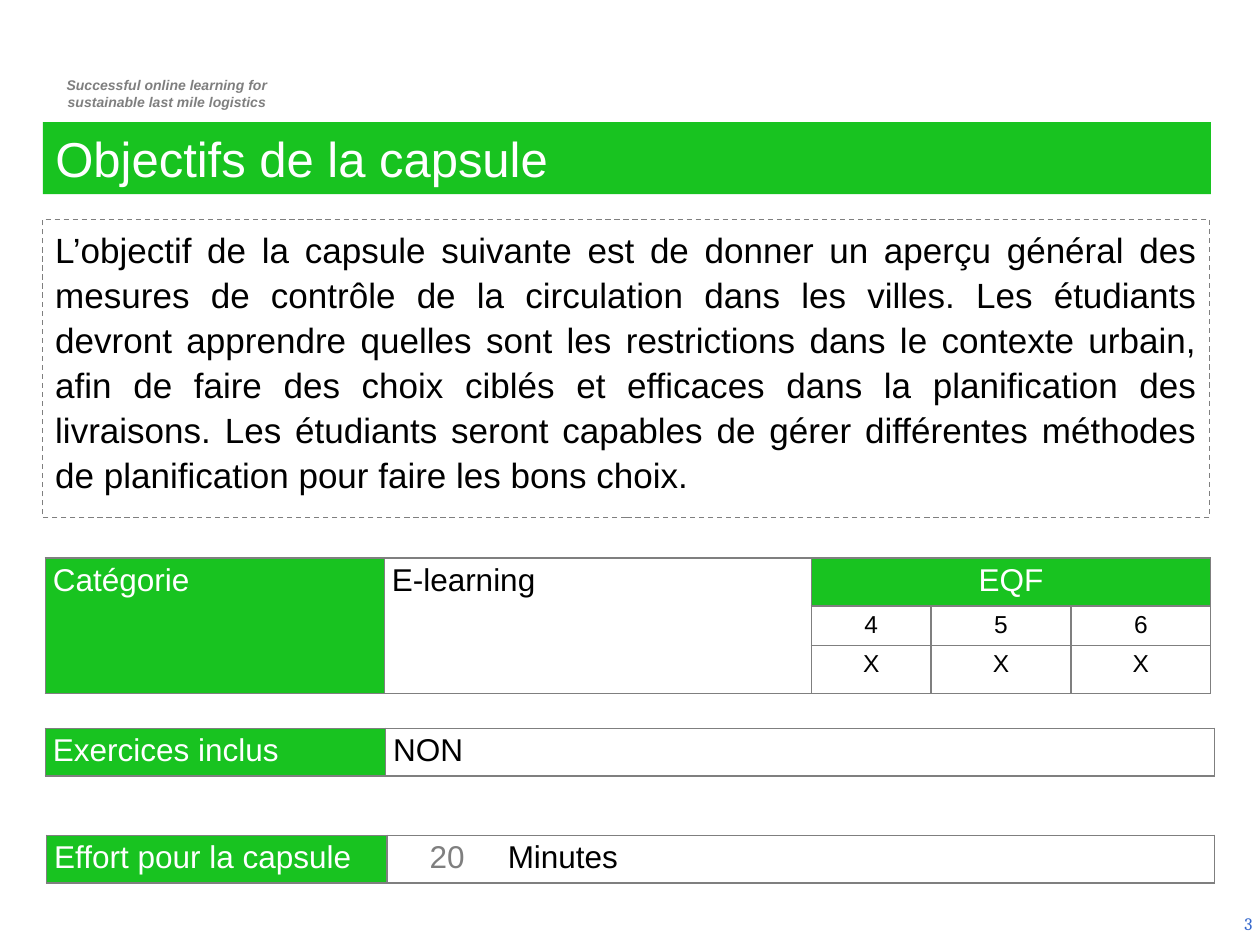
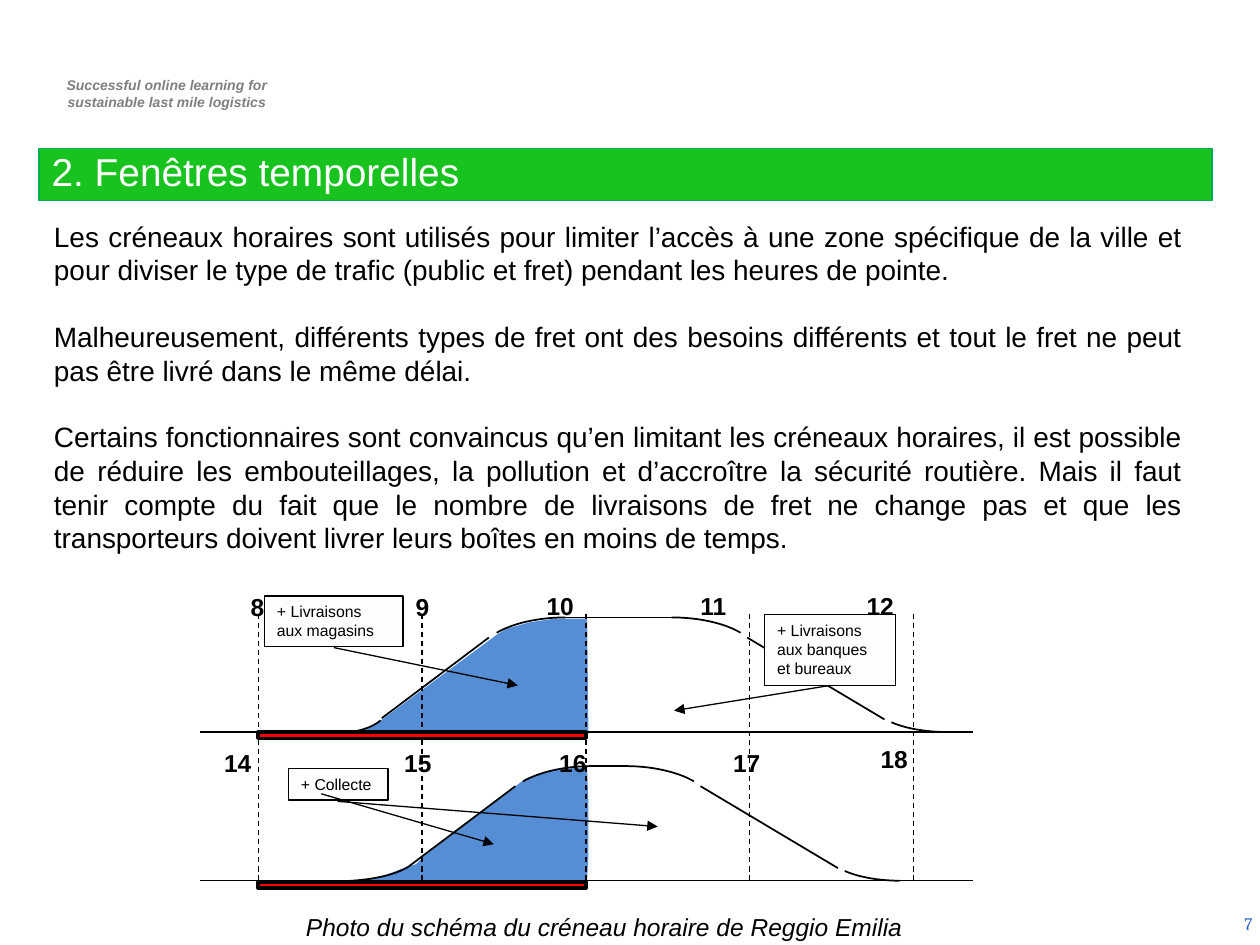
from dataclasses import dataclass
from typing import NamedTuple

from lxml.etree import SubElement
from pptx import Presentation
from pptx.dml.color import RGBColor
from pptx.enum.dml import MSO_LINE
from pptx.enum.shapes import MSO_CONNECTOR, MSO_SHAPE
from pptx.enum.text import MSO_ANCHOR, MSO_AUTO_SIZE, PP_ALIGN
from pptx.oxml.ns import qn
from pptx.util import Emu, Pt

EMU_PER_PX = 9144


@dataclass(frozen=True)
class Theme:
    """Colours, fonts and type sizes shared by the slides."""
    green: str = "18C320"
    green_edge: str = "00B050"
    gray: str = "7F7F7F"
    black: str = "000000"
    white: str = "FFFFFF"
    number_blue: str = "3366CC"
    area_blue: str = "558ED5"
    red: str = "FF0000"
    callout: str = "FDFDFD"
    font: str = "Arial"
    number_font: str = "Cambria"
    title: float = 28
    subtitle: float = 22.2
    objective: float = 20
    table: float = 18
    body: float = 16
    small: float = 14
    number: float = 10
    note: float = 9
    header: float = 8


THEME = Theme()


class Box(NamedTuple):
    """Place and size in px."""
    left: int
    top: int
    width: int
    height: int


class TextStyle(NamedTuple):
    """Look of one block of text."""
    size: float
    color: str = THEME.black
    align: PP_ALIGN = PP_ALIGN.LEFT
    bold: bool = False
    italic: bool = False
    font: str = THEME.font
    line_spacing: float = 1.0
    gap: float = 0


class Outline(NamedTuple):
    """Look of a line."""
    color: str = THEME.black
    width: float = 0.75
    dashed: bool = False


class Cell(NamedTuple):
    """One table cell with its span."""
    row: int
    column: int
    text: str
    style: TextStyle
    fill: str | None = None
    rows: int = 1
    columns: int = 1


class Profile(NamedTuple):
    """One delivery curve, as shifts from the morning curve."""
    drop: int
    left_shift: int
    right_shift: int
    foot: Box
    foot_start: int


HEADER = TextStyle(THEME.header, THEME.gray, PP_ALIGN.CENTER, True, True)
NUMBER = TextStyle(THEME.number, THEME.number_blue, PP_ALIGN.RIGHT, font=THEME.number_font)
HEADING = TextStyle(THEME.table, THEME.white)
VALUE = TextStyle(THEME.table)
LEVEL = TextStyle(THEME.small, align=PP_ALIGN.CENTER)
HOUR = TextStyle(THEME.small, bold=True)

OBJECTIVE = (
    "L’objectif de la capsule suivante est de donner un aperçu général des mesures de contrôle "
    "de la circulation dans les villes. Les étudiants devront apprendre quelles sont les "
    "restrictions dans le contexte urbain, afin de faire des choix ciblés et efficaces dans la "
    "planification des livraisons. Les étudiants seront capables de gérer différentes méthodes "
    "de planification pour faire les bons choix.")
TIME_WINDOWS = "\n".join((
    "Les créneaux horaires sont utilisés pour limiter l’accès à une zone spécifique de la ville "
    "et pour diviser le type de trafic (public et fret) pendant les heures de pointe.",
    "Malheureusement, différents types de fret ont des besoins différents et tout le fret ne "
    "peut pas être livré dans le même délai.",
    "Certains fonctionnaires sont convaincus qu’en limitant les créneaux horaires, il est "
    "possible de réduire les embouteillages, la pollution et d’accroître la sécurité routière. "
    "Mais il faut tenir compte du fait que le nombre de livraisons de fret ne change pas et que "
    "les transporteurs doivent livrer leurs boîtes en moins de temps."))

MORNING_AREA = ((466, 491), (440, 491), (420, 494), (402, 499), (394, 504), (302, 572),
                (293, 577), (285, 580), (279, 582), (467, 582))
AFTERNOON_AREA = ((466, 609), (448, 610), (431, 613), (417, 618), (336, 680), (330, 686),
                  (323, 688), (310, 693), (300, 697), (290, 698), (271, 699), (466, 700),
                  (467, 680), (467, 636))
PROFILES = (Profile(0, 0, 0, Box(248, 521, 43, 78), 290),
            Profile(118, 21, -37, Box(245, 613, 43, 130), 280))
HOURS = (("8", 189, 465), ("9", 320, 465), ("10", 424, 464), ("11", 546, 464),
         ("12", 678, 464), ("14", 168, 589), ("15", 311, 589), ("16", 434, 589),
         ("17", 572, 589), ("18", 689, 586))
CALLOUTS = (("+ Livraisons aux magasins", Box(210, 473, 110, 40)),
            ("+ Livraisons aux banques et bureaux", Box(607, 488, 104, 56)),
            ("+ Collecte", Box(229, 610, 79, 25)))
ARROWS = ((265, 514, 411, 544), (659, 544, 535, 564), (255, 630, 392, 670), (268, 636, 522, 656))


def px(length: int) -> Emu:
    """Turn px into EMU."""
    return Emu(length * EMU_PER_PX)


def place(box: Box) -> tuple[Emu, ...]:
    """Turn a box into EMU."""
    return tuple(px(length) for length in box)


def write(text_frame, text: str, style: TextStyle, anchor=MSO_ANCHOR.TOP) -> None:
    """Fill a text frame and format its runs."""
    text_frame.text = text
    text_frame.word_wrap = True
    text_frame.vertical_anchor = anchor
    for index, paragraph in enumerate(text_frame.paragraphs):
        paragraph.alignment = style.align
        paragraph.line_spacing = style.line_spacing
        if index and style.gap:
            paragraph.space_before = Pt(style.gap)
        for run in paragraph.runs:
            run.font.name = style.font
            run.font.size = Pt(style.size)
            run.font.bold = style.bold
            run.font.italic = style.italic
            run.font.color.rgb = RGBColor.from_string(style.color)


def paint(fill, color: str | None) -> None:
    """Set a solid fill or none."""
    if color is None:
        fill.background()
    else:
        fill.solid()
        fill.fore_color.rgb = RGBColor.from_string(color)


def draw_outline(line, outline: Outline | None) -> None:
    """Set a line's colour, width and dash."""
    paint(line.fill, outline.color if outline else None)
    if outline:
        line.width = Pt(outline.width)
        if outline.dashed:
            line.dash_style = MSO_LINE.DASH


def add_text(shapes, box: Box, text: str, style: TextStyle, anchor=MSO_ANCHOR.TOP):
    """Add a text box."""
    shape = shapes.add_textbox(*place(box))
    write(shape.text_frame, text, style, anchor)
    return shape


def add_box(shapes, box: Box, fill: str | None, outline: Outline, kind=MSO_SHAPE.RECTANGLE):
    """Add a preset shape without shadow."""
    shape = shapes.add_shape(kind, *place(box))
    shape.shadow.inherit = False
    paint(shape.fill, fill)
    draw_outline(shape.line, outline)
    return shape


def add_line(shapes, ends: tuple[int, int, int, int], outline=Outline(), arrow=False) -> None:
    """Add a straight line or arrow."""
    connector = shapes.add_connector(MSO_CONNECTOR.STRAIGHT, *(px(end) for end in ends))
    draw_outline(connector.line, outline)
    properties = connector._element.spPr
    if arrow:
        SubElement(properties.find(qn("a:ln")), qn("a:tailEnd"), type="triangle")
    SubElement(properties, qn("a:effectLst"))


def add_arc(shapes, box: Box, rotation: int, start: int, end: int) -> None:
    """Add an arc between two angles in degrees."""
    arc = add_box(shapes, box, None, Outline(width=1), MSO_SHAPE.ARC)
    arc.adjustments[0] = start * 0.6
    arc.adjustments[1] = end * 0.6
    arc.rotation = rotation


def add_area(shapes, points: tuple[tuple[int, int], ...]) -> None:
    """Add a filled area under a curve."""
    builder = shapes.build_freeform(*points[0], scale=EMU_PER_PX)
    builder.add_line_segments(points[1:], close=True)
    area = builder.convert_to_shape()
    area.shadow.inherit = False
    paint(area.fill, THEME.area_blue)
    draw_outline(area.line, None)


def add_table(shapes, left: int, top: int, widths: tuple[int, ...], heights: tuple[int, ...],
              cells: tuple[Cell, ...]):
    """Add a bordered table and return it."""
    box = Box(left, top, sum(widths), sum(heights))
    table = shapes.add_table(len(heights), len(widths), *place(box)).table
    table.first_row = table.horz_banding = False
    for column, width in zip(table.columns, widths):
        column.width = px(width)
    for row, height in zip(table.rows, heights):
        row.height = px(height)
    for cell in table.iter_cells():
        cell.margin_left = cell.margin_right = px(6)
        cell.margin_top = cell.margin_bottom = px(4)
        for side in ("lnL", "lnR", "lnT", "lnB"):
            border = SubElement(cell._tc.get_or_add_tcPr(), qn(f"a:{side}"), w=str(Pt(1)))
            solid = SubElement(border, qn("a:solidFill"))
            SubElement(solid, qn("a:srgbClr"), val=THEME.gray)
        paint(cell.fill, None)
    for item in cells:
        cell = table.cell(item.row, item.column)
        if item.rows * item.columns > 1:
            cell.merge(table.cell(item.row + item.rows - 1, item.column + item.columns - 1))
        write(cell.text_frame, item.text, item.style)
        paint(cell.fill, item.fill)
    return table


def add_slide(presentation, number: str, title: str, box: Box, style: TextStyle,
              outline: Outline | None, anchor):
    """Add a slide with header, page number and title band."""
    slide = presentation.slides.add_slide(presentation.slide_layouts[5])
    header = add_text(slide.shapes, Box(29, 56, 203, 37),
                      "Successful online learning for\nsustainable last mile logistics", HEADER)
    header.text_frame.margin_left = px(14)
    page = add_text(slide.shapes, Box(771, 716, 229, 34), number, NUMBER, MSO_ANCHOR.MIDDLE)
    page.text_frame.margin_right = px(6)
    band = slide.shapes.title
    band.left, band.top, band.width, band.height = place(box)
    paint(band.fill, THEME.green)
    draw_outline(band.line, outline)
    write(band.text_frame, title, style, anchor)
    band.text_frame.auto_size = MSO_AUTO_SIZE.NONE
    return slide


def build_objectives(presentation) -> None:
    """Build the slide of objectives."""
    slide = add_slide(presentation, "3", "Objectifs de la capsule", Box(34, 97, 927, 57),
                      TextStyle(THEME.title, THEME.white), None, MSO_ANCHOR.TOP)
    shapes = slide.shapes
    objective = add_box(shapes, Box(34, 174, 926, 237), None, Outline(THEME.gray, dashed=True))
    write(objective.text_frame, OBJECTIVE,
          TextStyle(THEME.objective, align=PP_ALIGN.JUSTIFY, line_spacing=1.07))
    levels = tuple(Cell(row, column, text, LEVEL)
                   for row, texts in enumerate(("456", "XXX"), 1)
                   for column, text in enumerate(texts, 2))
    add_table(shapes, 36, 443, (269, 339, 95, 111, 111), (37, 31, 37), (
        Cell(0, 0, "Catégorie", HEADING, THEME.green, rows=3),
        Cell(0, 1, "E-learning", VALUE, rows=3),
        Cell(0, 2, "EQF", HEADING._replace(align=PP_ALIGN.CENTER), THEME.green, columns=3),
        *levels))
    add_table(shapes, 36, 578, (270, 658), (37,), (
        Cell(0, 0, "Exercices inclus", HEADING, THEME.green), Cell(0, 1, "NON", VALUE)))
    effort = add_table(shapes, 37, 663, (270, 657), (37,), (
        Cell(0, 0, "Effort pour la capsule", HEADING, THEME.green),
        Cell(0, 1, "20", VALUE._replace(color=THEME.gray))))
    duration = effort.cell(0, 1)
    duration.margin_left = px(34)
    paragraph = duration.text_frame.paragraphs[0]
    tabs = SubElement(paragraph._p.get_or_add_pPr(), qn("a:tabLst"))
    SubElement(tabs, qn("a:tab"), pos=str(px(62)), algn="l")
    unit = paragraph.add_run()
    unit.text = "\tMinutes"
    unit.font.name, unit.font.size = THEME.font, Pt(THEME.table)
    unit.font.color.rgb = RGBColor.from_string(THEME.black)


def draw_profile(shapes, profile: Profile) -> None:
    """Draw one delivery curve with its baseline."""
    drop, left, right = profile.drop, profile.left_shift, profile.right_shift
    stroke = Outline(width=1)
    add_line(shapes, (159, 581 + drop, 772, 581 + drop))
    add_arc(shapes, profile.foot, 90, profile.foot_start, 0)
    add_line(shapes, (303 + left, 570 + drop, 388 + left, 506 + drop), stroke)
    add_arc(shapes, Box(418 + left, 452 + drop, 62, 138), 270, 289, 0)
    add_line(shapes, (449 + left, 490 + drop, 533 + right, 490 + drop), stroke)
    add_arc(shapes, Box(502 + right, 452 + drop, 62, 138), 270, 0, 71)
    add_line(shapes, (593 + right, 506 + drop, 702 + right, 571 + drop), stroke)
    add_arc(shapes, Box(731 + right, 501 + drop, 43, 117), 270, 184, 253)


def build_time_windows(presentation) -> None:
    """Build the slide of time windows and its diagram."""
    slide = add_slide(presentation, "7", "2. Fenêtres temporelles", Box(31, 118, 931, 41),
                      TextStyle(THEME.subtitle, THEME.white, line_spacing=0.8),
                      Outline(THEME.green_edge), MSO_ANCHOR.BOTTOM)
    add_text(slide.shapes, Box(33, 169, 915, 280), TIME_WINDOWS,
             TextStyle(THEME.body, align=PP_ALIGN.JUSTIFY, gap=19))
    add_text(slide.shapes, Box(233, 719, 532, 31),
             "Photo du schéma du créneau horaire de Reggio Emilia",
             TextStyle(THEME.small, italic=True))
    shapes = slide.shapes.add_group_shape().shapes
    for area in (AFTERNOON_AREA, MORNING_AREA):
        add_area(shapes, area)
    for guide in range(205, 726, 130):
        add_line(shapes, (guide, 487, guide, 700), Outline(dashed=True))
    for profile in PROFILES:
        draw_profile(shapes, profile)
    for hour, left, top in HOURS:
        add_text(shapes, Box(left, top, 50, 24), hour, HOUR)
    for top in (581, 700):
        add_box(shapes, Box(205, top, 260, 5), THEME.red, Outline(width=2))
    for text, box in CALLOUTS:
        callout = add_box(shapes, box, THEME.callout, Outline())
        write(callout.text_frame, text, TextStyle(THEME.note))
    for ends in ARROWS:
        add_line(shapes, ends, arrow=True)


def main() -> None:
    """Build and save the presentation."""
    presentation = Presentation()
    presentation.slide_width, presentation.slide_height = px(1000), px(750)
    build_objectives(presentation)
    build_time_windows(presentation)
    presentation.save("out.pptx")


if __name__ == "__main__":
    main()
